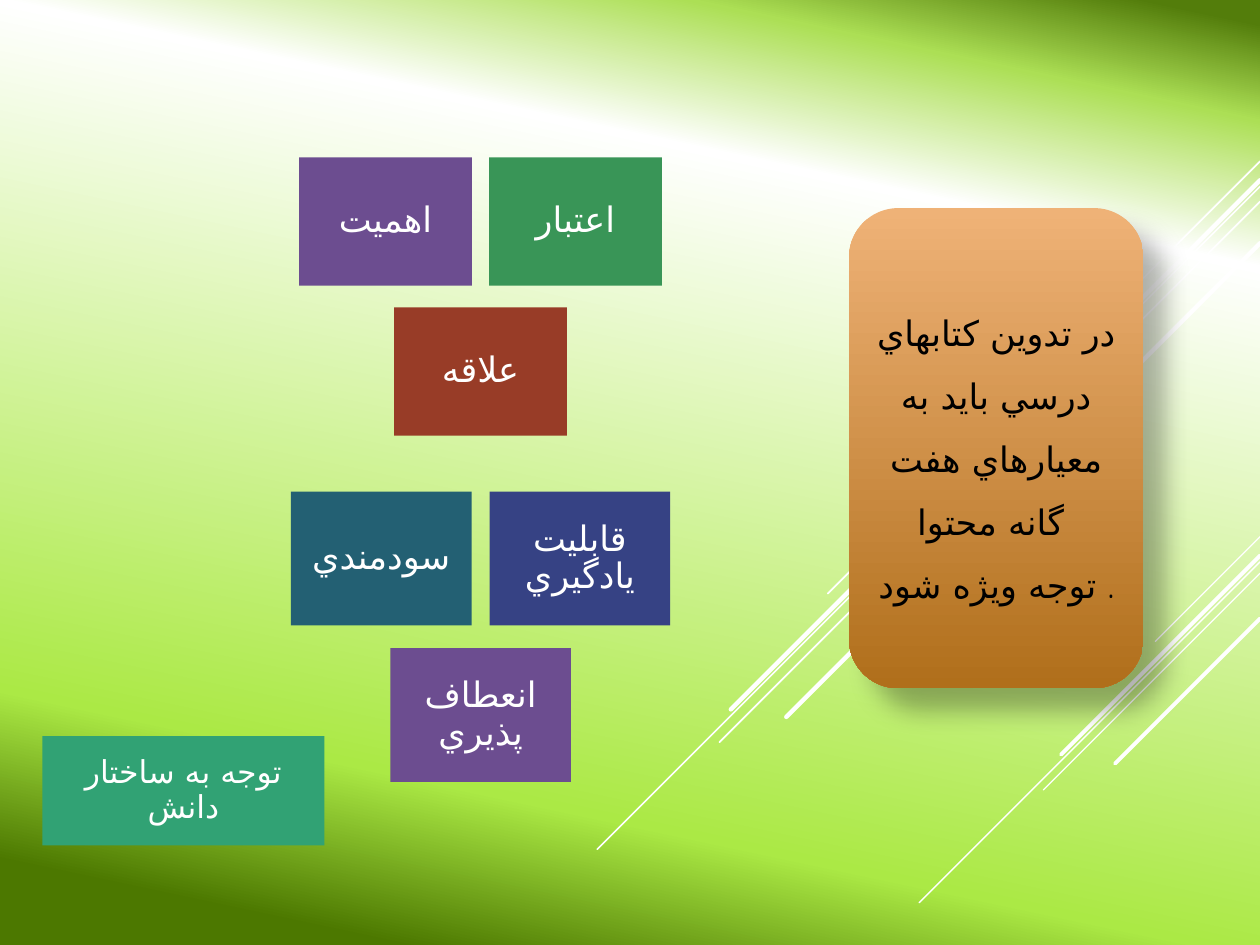
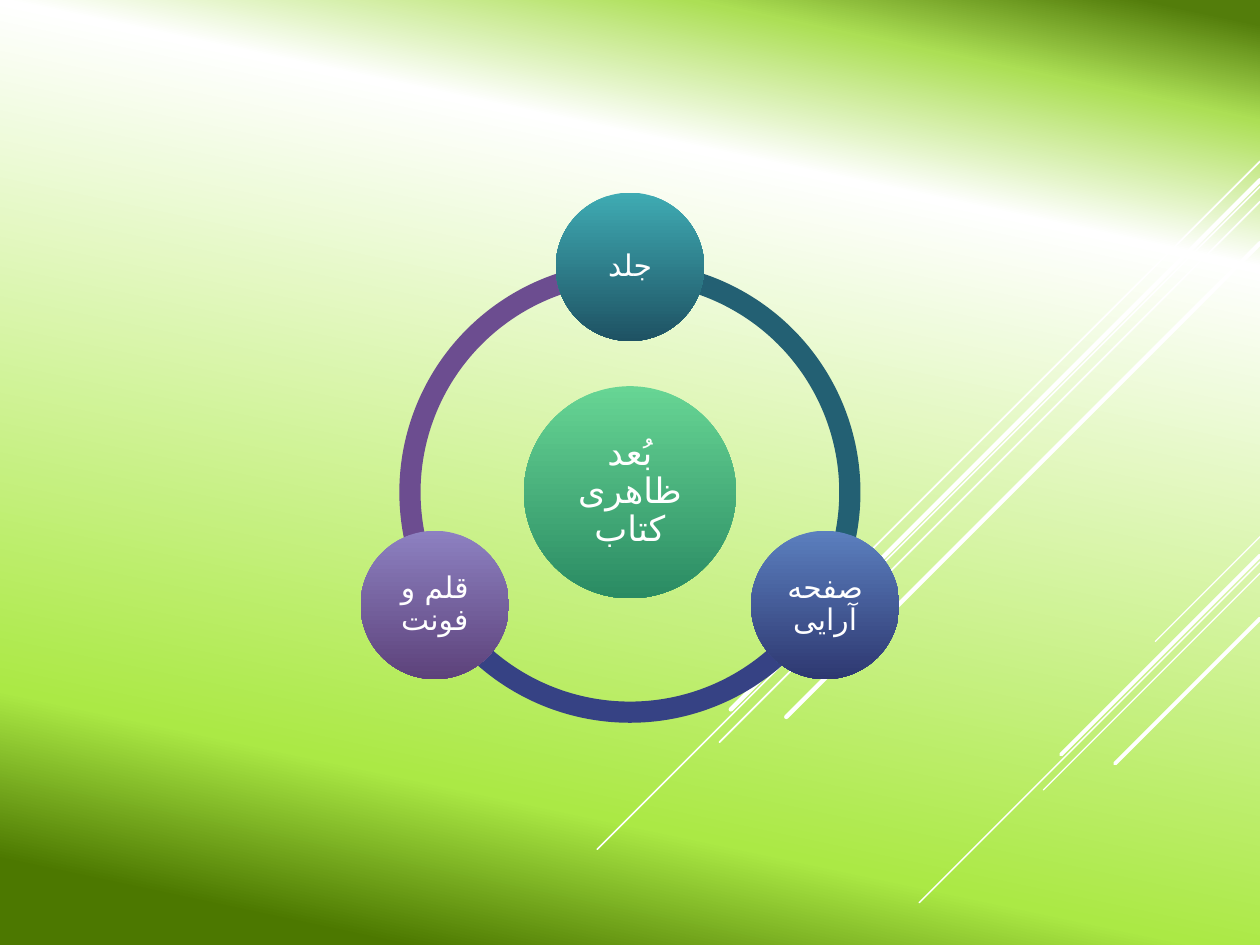
from dataclasses import dataclass
from math import cos, radians, sin

from lxml.etree import SubElement
from pptx import Presentation
from pptx.dml.color import RGBColor
from pptx.enum.shapes import MSO_CONNECTOR, MSO_SHAPE
from pptx.enum.text import MSO_ANCHOR, PP_ALIGN
from pptx.oxml.ns import qn
from pptx.util import Pt


@dataclass(frozen=True)
class Theme:
    white: str = "FFFFFF"
    black: str = "000000"
    purple: str = "6C4D90"
    green: str = "399557"
    rust: str = "983C27"
    teal: str = "236073"
    navy: str = "364284"
    mint: str = "31A274"
    sky: tuple = ((2, "537D0B"), (10, "ACDF55"), (22, "FFFFFF"),
                  (79, "ABE945"), (93, "4C7800"))
    amber_fade: tuple = ((0, "EFB277"), (100, "B06F1B"))
    green_fade: tuple = ((0, "67D594"), (100, "2A8B63"))
    teal_fade: tuple = ((0, "3FABB3"), (100, "1E5263"))
    navy_fade: tuple = ((0, "5B7FBE"), (100, "2E3871"))
    purple_fade: tuple = ((0, "8D81C1"), (100, "5D427B"))
    criteria_font: str = "Quicksand"
    cycle_font: str = "Cabin"
    persian_font: str = "DejaVu Sans"
    large: int = 20
    medium: int = 18
    small: int = 17


THEME = Theme()
SLIDE_WIDTH, SLIDE_HEIGHT = 720, 540

STREAKS = [
    (306.7, 59.8, 0.75), (321.1, 194.8, 0.75), (327.6, 123.8, 0.75),
    (317.5, 113.7, 2.25), (353.5, 82.8, 2.25),
    (92.2, 247, 1), (106.6, 378.7, 1), (115.2, 308.9, 1),
    (103, 302.4, 2.5), (139, 270.7, 2.5),
]

CRITERIA_INTRO = [
    "در تدوين كتابهاي درسي بايد به معيارهاي هفت گانه محتوا ",
    "توجه ويژه شود .",
]
CRITERIA_TRIOS = [
    {"top": 90, "width": 98.7, "height": 73.3, "tiles": [
        ("اهميت", THEME.purple), ("اعتبار", THEME.green), ("علاقه", THEME.rust)]},
    {"top": 280.9, "width": 103.2, "height": 76.5, "tiles": [
        ("سودمندي", THEME.teal), ("قابليت يادگيري", THEME.navy),
        ("انعطاف پذيري", THEME.purple)]},
]
STRUCTURE_CRITERION = "توجه به ساختار دانش"
TRIO_CENTER = 274.6

APPEARANCE = "بُعد ظاهری کتاب"
ASPECTS = [
    ("جلد", THEME.teal_fade, THEME.teal),
    ("صفحه آرایی", THEME.navy_fade, THEME.navy),
    ("قلم و فونت", THEME.purple_fade, THEME.purple),
]
CYCLE_CENTER = (360, 281.3)
RING_DIAMETER, ORBIT = 263.5, 128.8
HUB_DIAMETER, ASPECT_DIAMETER = 121.2, 84.8


def paint_gradient(fill, owner, stops, angle):
    fill.gradient()
    gradient = next(owner.iter(qn("a:gradFill")))
    for child in list(gradient):
        gradient.remove(child)
    stop_list = SubElement(gradient, qn("a:gsLst"))
    for position, color in stops:
        stop = SubElement(stop_list, qn("a:gs"), pos=str(position * 1000))
        SubElement(stop, qn("a:srgbClr"), val=color)
    SubElement(gradient, qn("a:lin"), ang=str(angle * 60000), scaled="0")


def write(shape, paragraphs, *, font, size=THEME.large, color=THEME.white,
          spacing=0.9, inset=(5.76, 5.76)):
    frame = shape.text_frame
    frame.word_wrap = True
    frame.vertical_anchor = MSO_ANCHOR.MIDDLE
    frame.margin_left = frame.margin_right = Pt(inset[0])
    frame.margin_top = frame.margin_bottom = Pt(inset[1])
    for index, text in enumerate(paragraphs):
        paragraph = frame.add_paragraph() if index else frame.paragraphs[0]
        paragraph.alignment = PP_ALIGN.CENTER
        paragraph.line_spacing = spacing
        run = paragraph.add_run()
        run.text = text
        run.font.size = Pt(size)
        run.font.color.rgb = RGBColor.from_string(color)
        run.font.name = font
        SubElement(run.font._element, qn("a:cs"), typeface=THEME.persian_font)


def add_block(slide, kind, box, paint):
    shape = slide.shapes.add_shape(kind, *(Pt(length) for length in box))
    shape.shadow.inherit = False
    shape.line.fill.background()
    if isinstance(paint, str):
        shape.fill.solid()
        shape.fill.fore_color.rgb = RGBColor.from_string(paint)
    else:
        paint_gradient(shape.fill, shape.element, paint, 90)
    return shape


def circle_box(center, diameter):
    return center[0] - diameter / 2, center[1] - diameter / 2, diameter, diameter


def drop_shadow(shape, *, opacity, blur, distance, angle):
    effects = shape.element.spPr.find(qn("a:effectLst"))
    shadow = SubElement(effects, qn("a:outerShdw"), blurRad=str(Pt(blur)),
                        dist=str(Pt(distance)), dir=str(angle * 60000),
                        algn="tl", rotWithShape="0")
    color = SubElement(shadow, qn("a:srgbClr"), val=THEME.black)
    SubElement(color, qn("a:alpha"), val=str(opacity * 1000))


def decorate_master(master, slide):
    paint_gradient(master.background.fill, master.element, THEME.sky, 102)
    for top, reach, weight in STREAKS:
        streak = slide.shapes.add_connector(
            MSO_CONNECTOR.STRAIGHT, Pt(SLIDE_WIDTH), Pt(top),
            Pt(SLIDE_WIDTH - reach), Pt(top + reach))
        streak.line.color.rgb = RGBColor.from_string(THEME.white)
        streak.line.width = Pt(weight)
        properties = streak._element.spPr
        properties.find(qn("a:ln")).set("cap", "rnd")
        SubElement(properties, qn("a:effectLst"))
        master.shapes.element.append(streak._element)


def build_criteria(slide):
    for trio in CRITERIA_TRIOS:
        top, width, height = trio["top"], trio["width"], trio["height"]
        half_gap = 0.05 * width
        lower = top + height + 0.125 * width
        corners = [(TRIO_CENTER - half_gap - width, top),
                   (TRIO_CENTER + half_gap, top),
                   (TRIO_CENTER - width / 2, lower)]
        for (criterion, color), corner in zip(trio["tiles"], corners):
            tile = add_block(slide, MSO_SHAPE.RECTANGLE, (*corner, width, height), color)
            write(tile, [criterion], font=THEME.criteria_font)

    structure = add_block(slide, MSO_SHAPE.RECTANGLE, (24.2, 420.6, 161.2, 62.6), THEME.mint)
    write(structure, [STRUCTURE_CRITERION], font=THEME.criteria_font,
          size=THEME.medium, inset=(5, 5))

    intro = add_block(slide, MSO_SHAPE.ROUNDED_RECTANGLE,
                      (485.2, 118.9, 168.2, 274.3), THEME.amber_fade)
    drop_shadow(intro, opacity=30, blur=15, distance=18, angle=45)
    write(intro, CRITERIA_INTRO, font=THEME.criteria_font, color=THEME.black,
          spacing=1.5, inset=(7.2, 3.6))


def build_cycle(slide):
    step = 360 / len(ASPECTS)
    angles = [(270 + index * step) % 360 for index in range(len(ASPECTS))]
    for angle, (_, _, color) in reversed(list(zip(angles, ASPECTS))):
        arc = add_block(slide, MSO_SHAPE.BLOCK_ARC,
                        circle_box(CYCLE_CENTER, RING_DIAMETER),
                        color)
        arc.adjustments[0] = angle * 0.6
        arc.adjustments[1] = (angle + step) % 360 * 0.6
        arc.adjustments[2] = 0.046

    hub = add_block(slide, MSO_SHAPE.OVAL,
                    circle_box(CYCLE_CENTER, HUB_DIAMETER), THEME.green_fade)
    write(hub, [APPEARANCE], font=THEME.cycle_font, inset=(2, 2))

    for angle, (aspect, fade, _) in zip(angles, ASPECTS):
        center = (CYCLE_CENTER[0] + ORBIT * cos(radians(angle)),
                  CYCLE_CENTER[1] + ORBIT * sin(radians(angle)))
        node = add_block(slide, MSO_SHAPE.OVAL,
                         circle_box(center, ASPECT_DIAMETER), fade)
        write(node, [aspect], font=THEME.cycle_font, size=THEME.small, inset=(1.5, 1.5))


def main():
    deck = Presentation()
    deck.slide_width, deck.slide_height = Pt(SLIDE_WIDTH), Pt(SLIDE_HEIGHT)
    blank = deck.slide_layouts[6]
    criteria, cycle = (deck.slides.add_slide(blank) for _ in range(2))
    for placeholder in [*criteria.placeholders, *cycle.placeholders]:
        placeholder.element.getparent().remove(placeholder.element)
    decorate_master(deck.slide_master, criteria)
    build_criteria(criteria)
    build_cycle(cycle)
    deck.save("out.pptx")


if __name__ == "__main__":
    main()
